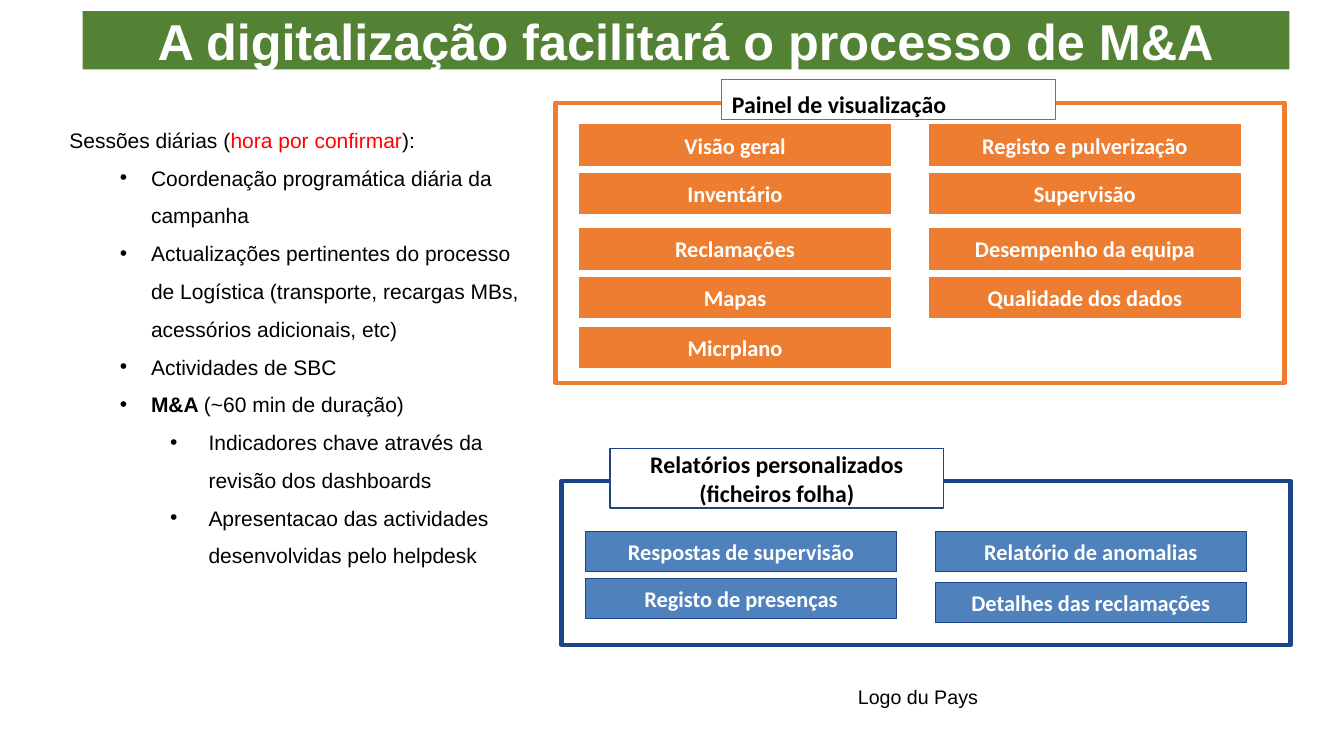
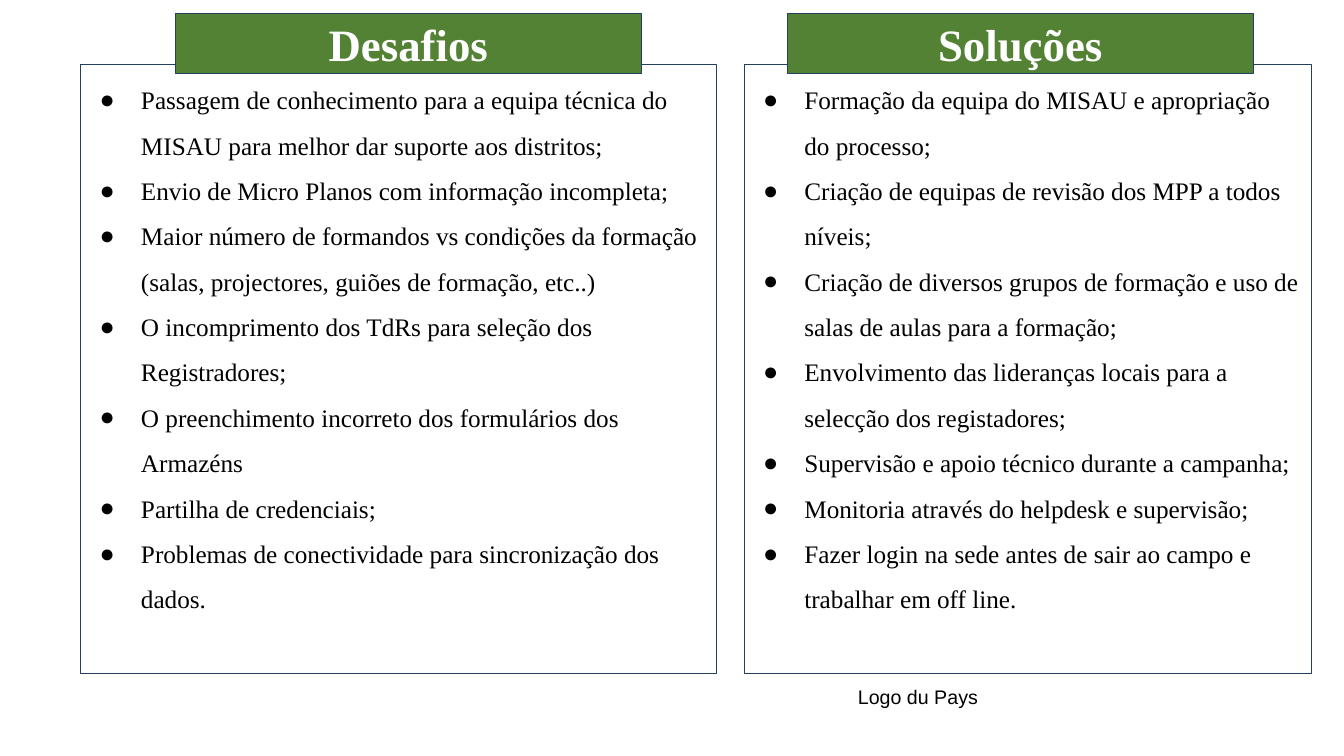
from lxml.etree import SubElement
from pptx import Presentation
from pptx.dml.color import RGBColor
from pptx.enum.shapes import MSO_SHAPE
from pptx.enum.text import MSO_ANCHOR, PP_ALIGN
from pptx.oxml.ns import qn
from pptx.util import Inches, Pt

GREEN, ORANGE, BLUE, NAVY = "548235", "ED7D31", "4F81BD", "1C4587"
SLATE, RED, CRIMSON = "244061", "FF0000", "C0504D"
BLACK, WHITE = "000000", "FFFFFF"
SANS, LABEL, SERIF = "Arial", "Calibri", "Times New Roman"

TITLE = "A digitalização facilitará o processo de M&A"
FOOTER = "Logo du Pays"

# Each entry: indent level, then runs of (text, format)
SESSIONS = [
    (0, [("Sessões diárias (", {}), ("hora por confirmar", {"color": RED}), ("):", {})]),
    (1, [("Coordenação programática diária da campanha", {})]),
    (1, [("Actualizações pertinentes do processo de Logística "
          "(transporte, recargas MBs, acessórios adicionais, etc)", {})]),
    (1, [("Actividades de SBC", {})]),
    (1, [("M&A ", {"bold": True}), ("(~60 min de duração)", {})]),
    (2, [("Indicadores chave através da revisão dos dashboards", {})]),
    (2, [("Apresentacao das actividades desenvolvidas pelo helpdesk", {})]),
]
SESSION_INDENTS = {1: (0.81, 0.31), 2: (1.38, 0.38)}

PANELS = [
    {
        "frame": (5.51, 1.02, 7.23, 2.78), "edge": ORANGE, "fill": ORANGE,
        "label": "Painel de visualização", "label_box": (7.16, 0.79, 3.31, 0.4),
        "label_edge": CRIMSON, "label_align": PP_ALIGN.LEFT, "label_anchor": MSO_ANCHOR.TOP,
        "columns": [
            [("Visão geral", 1.24), ("Inventário", 1.72), ("Reclamações", 2.27),
             ("Mapas", 2.75), ("Micrplano", 3.25)],
            [("Registo e pulverização", 1.24), ("Supervisão", 1.72),
             ("Desempenho da equipa", 2.27), ("Qualidade dos dados", 2.75)],
        ],
    },
    {
        "frame": (5.57, 4.77, 7.23, 1.63), "edge": NAVY, "fill": BLUE,
        "label": "Relatórios personalizados (ficheiros folha)",
        "label_box": (6.05, 4.45, 3.31, 0.59),
        "label_edge": NAVY, "label_align": PP_ALIGN.CENTER, "label_anchor": MSO_ANCHOR.MIDDLE,
        "columns": [
            [("Respostas de supervisão", 5.27), ("Registo de presenças", 5.74)],
            [("Relatório de anomalias", 5.27), ("Detalhes das reclamações", 5.78)],
        ],
    },
]
BUTTON_W, BUTTON_H, BUTTON_INSET, COLUMN_PITCH = 3.08, 0.4, 0.24, 3.47

# Each entry: heading, heading left, list left, list width, items
LISTS = [
    ("Desafios", 1.74, 0.8, 6.31, [
        "Passagem de conhecimento para a equipa técnica do MISAU para melhor "
        "dar suporte aos distritos;",
        "Envio de Micro Planos com informação incompleta;",
        "Maior número de formandos vs condições da formação "
        "(salas, projectores, guiões de formação, etc..)",
        "O incomprimento dos TdRs para seleção dos Registradores;",
        "O preenchimento incorreto dos formulários dos Armazéns",
        "Partilha de credenciais;",
        "Problemas de conectividade para sincronização dos dados.",
    ]),
    ("Soluções", 7.81, 7.38, 5.63, [
        "Formação da equipa do MISAU e apropriação do processo;",
        "Criação de equipas de revisão dos MPP a todos níveis;",
        "Criação de diversos grupos de formação e uso de salas de aulas para a formação;",
        "Envolvimento das lideranças locais para a selecção dos registadores;",
        "Supervisão e apoio técnico durante a campanha;",
        "Monitoria através do helpdesk e supervisão;",
        "Fazer login na sede antes de sair ao campo e trabalhar em off line.",
    ]),
]


def rgb(value):
    return RGBColor.from_string(value)


def add_box(slide, box, fill=None, edge=None, weight=0.75):
    sp = slide.shapes.add_shape(MSO_SHAPE.RECTANGLE, *map(Inches, box))
    sp.shadow.inherit = False
    if fill:
        sp.fill.solid()
        sp.fill.fore_color.rgb = rgb(fill)
    else:
        sp.fill.background()
    if edge:
        sp.line.color.rgb = rgb(edge)
        sp.line.width = Pt(weight)
    else:
        sp.line.fill.background()
    return sp


def set_frame(sp, anchor=MSO_ANCHOR.TOP, inset_y=0.05):
    tf = sp.text_frame
    tf.word_wrap = True
    tf.vertical_anchor = anchor
    tf.margin_left = tf.margin_right = Inches(0.1)
    tf.margin_top = tf.margin_bottom = Inches(inset_y)
    return tf


def add_run(p, text, size, font, color=BLACK, bold=False):
    r = p.add_run()
    r.text = text
    r.font.size, r.font.name, r.font.bold = Pt(size), font, bold
    r.font.color.rgb = rgb(color)


def write(sp, text, align=PP_ALIGN.CENTER, anchor=MSO_ANCHOR.MIDDLE, inset_y=0.05, **style):
    p = set_frame(sp, anchor, inset_y).paragraphs[0]
    p.alignment = align
    add_run(p, text, **style)


def set_bullet(p, char, left, hanging):
    pPr = p._p.get_or_add_pPr()
    pPr.set("marL", str(Inches(left)))
    pPr.set("indent", str(-Inches(hanging)))
    SubElement(SubElement(pPr, qn("a:buClr")), qn("a:srgbClr"), val=BLACK)
    SubElement(pPr, qn("a:buFont"), typeface=SANS)
    SubElement(pPr, qn("a:buChar"), char=char)


def write_list(sp, items, char, indents, **style):
    """Write (level, runs) items; levels found in indents get a bullet."""
    tf = set_frame(sp)
    for i, (level, runs) in enumerate(items):
        p = tf.add_paragraph() if i else tf.paragraphs[0]
        if level in indents:
            set_bullet(p, char, *indents[level])
        p.level = level
        p.alignment = PP_ALIGN.LEFT
        p.line_spacing = 1.5
        for text, extra in runs:
            add_run(p, text, **{**style, **extra})


def add_slide(prs):
    slide = prs.slides.add_slide(prs.slide_layouts[6])
    footer = slide.shapes.add_textbox(*map(Inches, (8.41, 6.75, 1.41, 0.71)))
    write(footer, FOOTER, align=PP_ALIGN.LEFT, anchor=MSO_ANCHOR.TOP, size=14, font=SANS)
    return slide


def add_panel(slide, panel):
    add_box(slide, panel["frame"], WHITE, panel["edge"], 3)
    label = add_box(slide, panel["label_box"], WHITE, panel["label_edge"])
    write(label, panel["label"], panel["label_align"], panel["label_anchor"],
          inset_y=0.1, size=17, font=LABEL, bold=True)
    for i, column in enumerate(panel["columns"]):
        left = panel["frame"][0] + BUTTON_INSET + i * COLUMN_PITCH
        for text, top in column:
            button = add_box(slide, (left, top, BUTTON_W, BUTTON_H),
                             panel["fill"], panel["edge"])
            write(button, text, inset_y=0.1, size=16, font=LABEL, color=WHITE, bold=True)


def build_process_slide(prs):
    slide = add_slide(prs)
    title = add_box(slide, (0.82, 0.11, 11.97, 0.58), GREEN)
    write(title, TITLE, size=36, font=SANS, color=WHITE, bold=True)
    for panel in PANELS:
        add_panel(slide, panel)
    sessions = add_box(slide, (0.59, 1.09, 4.83, 4.6), WHITE)
    write_list(sessions, SESSIONS, "•", SESSION_INDENTS, size=15, font=SANS)


def build_challenges_slide(prs):
    slide = add_slide(prs)
    for heading, heading_left, left, width, items in LISTS:
        body = add_box(slide, (left, 0.64, width, 6.04), edge=SLATE)
        write_list(body, [(0, [(item, {})]) for item in items], "●", {0: (0.5, 0.41)},
                   size=18, font=SERIF)
        band = add_box(slide, (heading_left, 0.13, 4.62, 0.6), GREEN, SLATE)
        write(band, heading, size=32, font=SERIF, color=WHITE, bold=True)


def main():
    prs = Presentation()
    prs.slide_width, prs.slide_height = Inches(13.33), Inches(7.5)
    build_process_slide(prs)
    build_challenges_slide(prs)
    prs.save("out.pptx")


if __name__ == "__main__":
    main()
